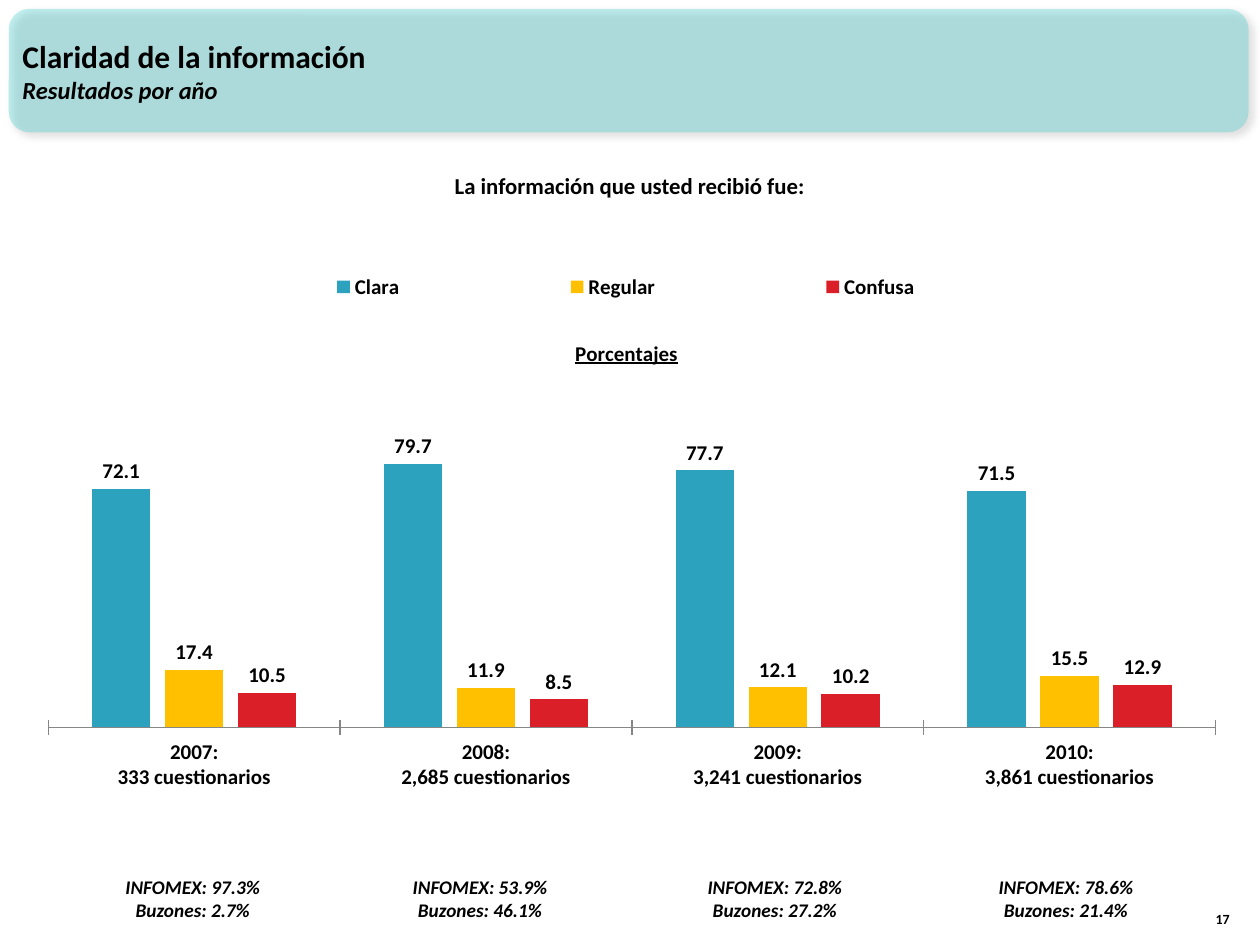
from lxml.etree import Element, SubElement
from pptx import Presentation
from pptx.chart.data import CategoryChartData
from pptx.dml.color import RGBColor
from pptx.enum.chart import XL_CHART_TYPE as ChartType, XL_LABEL_POSITION as LabelPosition
from pptx.enum.chart import XL_LEGEND_POSITION as LegendPosition, XL_TICK_MARK as TickMark
from pptx.enum.shapes import MSO_SHAPE as Shape
from pptx.enum.text import MSO_ANCHOR as Anchor, PP_ALIGN as Align
from pptx.oxml import parse_xml
from pptx.oxml.ns import nsdecls, qn
from pptx.util import Inches, Pt

YEARS = [
    ("2007", "333", "97.3", "2.7", 0.74),
    ("2008", "2,685", "53.9", "46.1", 3.02),
    ("2009", "3,241", "72.8", "27.2", 5.36),
    ("2010", "3,861", "78.6", "21.4", 7.67),
]
ANSWERS = [
    ("Clara", "2DA2BF", (72.1, 79.7, 77.7, 71.5)),
    ("Regular", "FFC000", (17.4, 11.9, 12.1, 15.5)),
    ("Confusa", "DA1F28", (10.5, 8.5, 10.2, 12.9)),
]


def color(value):
    return RGBColor.from_string(value)


class SlideBuilder:
    """Hold the style and the current slide, and add its elements."""

    font_name = "Calibri"
    ink = "000000"
    axis_gray = "868686"

    def __init__(self, page):
        self.page = page

    def style(self, font, size, italic=False):
        font.name = self.font_name
        font.size = Pt(size)
        font.bold = True
        font.italic = italic
        font.color.rgb = color(self.ink)

    def banner(self, left, top, width, height, fill):
        shape = self.page.shapes.add_shape(
            Shape.ROUNDED_RECTANGLE, Inches(left), Inches(top), Inches(width), Inches(height))
        shape.shadow.inherit = False
        shape.line.fill.background()
        shape.fill.solid()
        shape.fill.fore_color.rgb = color(fill)
        properties = shape.fill._xPr
        SubElement(properties.find(".//" + qn("a:srgbClr")), qn("a:alpha"), val="30000")
        properties.find(qn("a:effectLst")).append(parse_xml(
            f'<a:outerShdw {nsdecls("a")} blurRad="{Pt(4)}" dist="{Pt(3)}" dir="2700000" '
            'algn="tl" rotWithShape="0"><a:srgbClr val="000000">'
            '<a:alpha val="40000"/></a:srgbClr></a:outerShdw>'))

    def text(self, left, top, width, height, lines, align=Align.LEFT, anchor=Anchor.TOP):
        box = self.page.shapes.add_textbox(
            Inches(left), Inches(top), Inches(width), Inches(height))
        frame = box.text_frame
        frame.word_wrap = True
        frame.vertical_anchor = anchor
        for index, (words, size, italic) in enumerate(lines):
            para = frame.add_paragraph() if index else frame.paragraphs[0]
            para.alignment = align
            span = para.add_run()
            span.text = words
            self.style(span.font, size, italic)

    def place(self, element, position, **values):
        for old in element.findall(qn("c:layout")):
            element.remove(old)
        layout = Element(qn("c:layout"))
        element.insert(position, layout)
        manual = SubElement(layout, qn("c:manualLayout"))
        for name, value in values.items():
            SubElement(manual, qn("c:" + name), val=str(value))

    def column_chart(self, left, top, width, height, title, categories, answers):
        data = CategoryChartData(number_format="0.0")
        data.categories = categories
        for name, _, values in answers:
            data.add_series(name, values)
        chart = self.page.shapes.add_chart(
            ChartType.COLUMN_CLUSTERED, Inches(left), Inches(top),
            Inches(width), Inches(height), data).chart
        self.style(chart.font, 12)

        span = chart.chart_title.text_frame.paragraphs[0].add_run()
        span.text = title
        self.style(span.font, 12)
        span.font.underline = True

        chart.has_legend = True
        chart.legend.position = LegendPosition.TOP
        chart.legend.include_in_layout = False
        self.style(chart.legend.font, 12)

        root = chart.element.find(qn("c:chart"))
        self.place(root.find(qn("c:title")), 1, xMode="edge", yMode="edge", x=0.45, y=0.14)
        self.place(root.find(qn("c:legend")), 1, xMode="edge", yMode="edge",
                   x=0.12, y=0.02, w=0.75, h=0.07)
        self.place(root.find(qn("c:plotArea")), 0, layoutTarget="inner", xMode="edge",
                   yMode="edge", x=0.017, y=0.249, w=0.966, h=0.585)

        plot = chart.plots[0]
        plot.gap_width = 150
        plot.overlap = -25
        plot.vary_by_categories = False
        for series, (_, fill, _) in zip(plot.series, answers):
            series.format.fill.solid()
            series.format.fill.fore_color.rgb = color(fill)
            labels = series.data_labels
            labels.show_value = True
            labels.number_format = "0.0"
            labels.number_format_is_linked = False
            labels.position = LabelPosition.OUTSIDE_END
            self.style(labels.font, 12)

        chart.category_axis.major_tick_mark = TickMark.CROSS
        chart.category_axis.format.line.color.rgb = color(self.axis_gray)
        axis = chart.value_axis
        axis.minimum_scale = 0
        axis.maximum_scale = 100
        axis.major_unit = 20
        axis.has_major_gridlines = False
        axis.tick_labels.number_format = "0.0"
        axis.tick_labels.number_format_is_linked = False
        axis.visible = False


def main():
    deck = Presentation()
    deck.slide_width, deck.slide_height = Inches(10), Inches(7.5)
    builder = SlideBuilder(deck.slides.add_slide(deck.slide_layouts[6]))

    builder.banner(0.07, 0.07, 9.84, 0.98, "33CCCC")
    builder.text(0.08, 0.09, 9.17, 0.94, [
        ("Claridad de la información", 18, False),
        ("Resultados por año", 14, True),
    ], anchor=Anchor.MIDDLE)
    builder.text(9.46, 7.01, 0.4, 0.4, [("17", 8, False)], Align.RIGHT, Anchor.BOTTOM)
    builder.column_chart(
        0.22, 2.03, 9.59, 4.49, "Porcentajes",
        [f"{year}:\n{count} cuestionarios" for year, count, *_ in YEARS], ANSWERS)
    builder.text(0.89, 1.31, 8.21, 0.32,
                 [("La información que usted recibió fue:", 13, False)], Align.CENTER)
    for _, _, online, mailbox, left in YEARS:
        builder.text(left, 6.9, 1.58, 0.47, [
            (f"INFOMEX: {online}%", 11, True),
            (f"Buzones: {mailbox}%", 11, True),
        ], Align.CENTER)
    deck.save("out.pptx")


if __name__ == "__main__":
    main()
